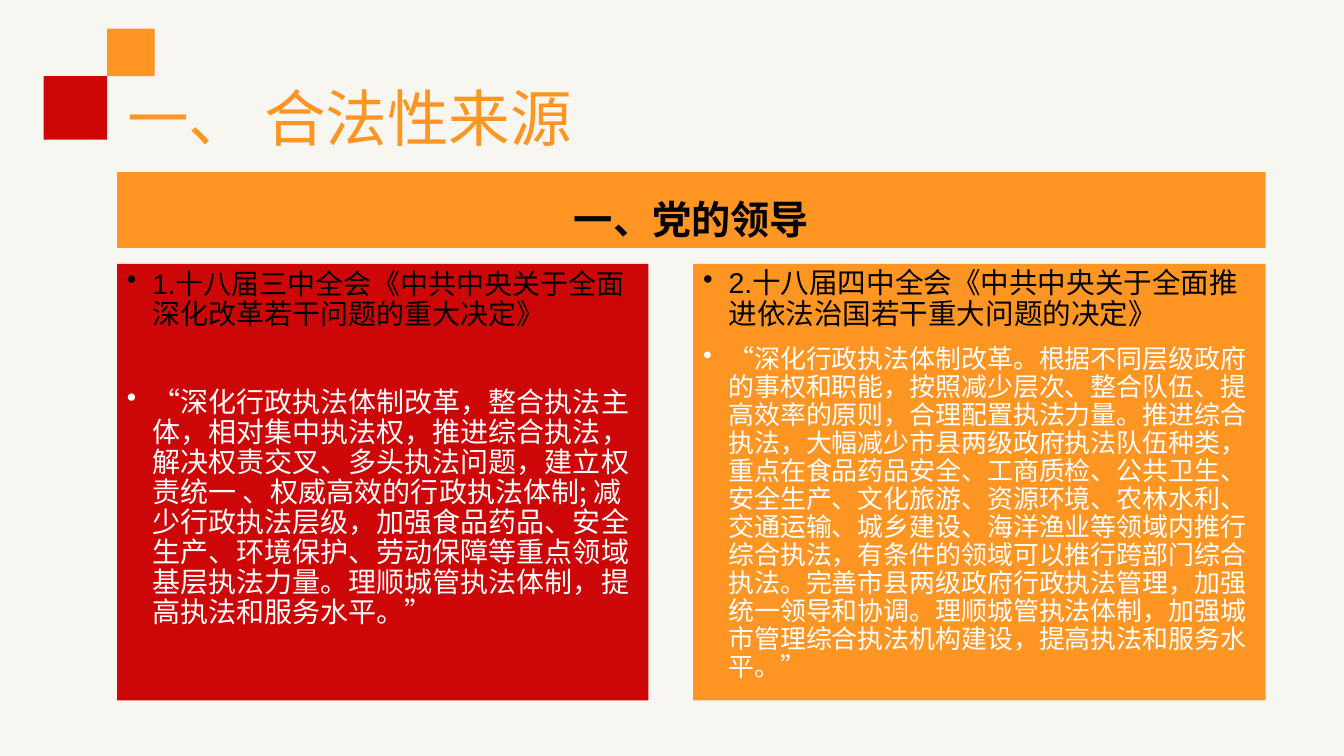
from lxml.etree import SubElement
from pptx import Presentation
from pptx.dml.color import RGBColor
from pptx.enum.shapes import MSO_SHAPE as Preset
from pptx.enum.text import MSO_ANCHOR as Anchor, PP_ALIGN as Align
from pptx.oxml.ns import qn
from pptx.util import Cm, Pt

RED = RGBColor(0xCD, 0x07, 0x07)
ORANGE = RGBColor(0xFF, 0x95, 0x23)
CREAM = RGBColor(0xF8, 0xF6, 0xF1)
BLACK = RGBColor(0, 0, 0)
WHITE = RGBColor(0xFF, 0xFF, 0xFF)

LATIN = "Arial"
CHINESE = "Noto Sans CJK SC"

LEFT = Cm(2.95)
RIGHT = Cm(31.9)
PANEL_TOP = Cm(6.65)
PANEL_HEIGHT = Cm(11)
LEFT_WIDTH = Cm(13.39)
RIGHT_WIDTH = Cm(14.43)

THIRD_PLENUM = "1.十八届三中全会《中共中央关于全面深化改革若干问题的重大决定》"
THIRD_QUOTE = (
    "“深化行政执法体制改革，整合执法主体，相对集中执法权，推进综合执法，"
    "解决权责交叉、多头执法问题，建立权责统一 、权威高效的行政执法体制; "
    "减少行政执法层级，加强食品药品、安全生产、环境保护、劳动保障等重点领域"
    "基层执法力量。理顺城管执法体制，提高执法和服务水平。”"
)
FOURTH_PLENUM = "2.十八届四中全会《中共中央关于全面推进依法治国若干重大问题的决定》"
FOURTH_QUOTE = (
    "“深化行政执法体制改革。根据不同层级政府的事权和职能，按照减少层次、"
    "整合队伍、提高效率的原则，合理配置执法力量。推进综合执法，大幅减少市县"
    "两级政府执法队伍种类，重点在食品药品安全、工商质检、公共卫生、安全生产、"
    "文化旅游、资源环境、农林水利、交通运输、城乡建设、海洋渔业等领域内推行"
    "综合执法，有条件的领域可以推行跨部门综合执法。完善市县两级政府行政执法"
    "管理，加强统一领导和协调。理顺城管执法体制，加强城市管理综合执法机构建设，"
    "提高执法和服务水平。”"
)


def add_block(slide, left, top, width, height, color):
    block = slide.shapes.add_shape(Preset.RECTANGLE, left, top, width, height)
    block.shadow.inherit = False
    block.fill.solid()
    block.fill.fore_color.rgb = color
    block.line.fill.background()
    block.text_frame.word_wrap = True
    return block


def style_text(para, size, color, name, spacing=0.9, align=Align.LEFT):
    para.alignment = align
    para.line_spacing = spacing
    para.font.size = Pt(size)
    para.font.color.rgb = color
    para.font.name = name
    if name == CHINESE:
        defaults = para.font._element
        SubElement(defaults, qn("a:ea"), typeface=name)


def add_bullet(para):
    properties = para._p.get_or_add_pPr()
    properties.set("marL", str(Cm(0.64)))
    properties.set("indent", str(-Cm(0.64)))
    bullet = properties.makeelement(qn("a:buChar"), {"char": "•"})
    properties.find(qn("a:defRPr")).addprevious(bullet)


def add_panel(slide, left, width, color, decision, quote, sizes, pitches, gap):
    panel = add_block(slide, left, PANEL_TOP, width, PANEL_HEIGHT, color)
    frame = panel.text_frame
    frame.vertical_anchor = Anchor.TOP
    source, passage = frame.paragraphs[0], frame.add_paragraph()
    source.text, passage.text = decision, quote
    style_text(source, sizes[0], BLACK, LATIN, Pt(pitches[0]))
    style_text(passage, sizes[1], WHITE, CHINESE, Pt(pitches[1]))
    passage.space_before = Pt(gap)
    for para in frame.paragraphs:
        add_bullet(para)


def add_title(slide, text):
    title = slide.shapes.title
    title.left, title.top = LEFT, Cm(1.78)
    title.width, title.height = Cm(28.6), Cm(2.57)
    title.text_frame.text = text
    title.text_frame.vertical_anchor = Anchor.MIDDLE
    style_text(title.text_frame.paragraphs[0], 44, ORANGE, LATIN)


def add_heading(slide, text):
    heading = add_block(slide, LEFT, Cm(4.34), RIGHT - LEFT, Cm(1.91), ORANGE)
    heading.text_frame.vertical_anchor = Anchor.BOTTOM
    para = heading.text_frame.paragraphs[0]
    para.text = text
    style_text(para, 28, BLACK, CHINESE, align=Align.CENTER)
    para.font.bold = True


def main():
    deck = Presentation()
    deck.slide_width, deck.slide_height = Cm(33.87), Cm(19.05)
    slide = deck.slides.add_slide(deck.slide_layouts[5])
    slide.background.fill.solid()
    slide.background.fill.fore_color.rgb = CREAM

    add_block(slide, Cm(1.1), Cm(1.92), Cm(1.6), Cm(1.6), RED)
    add_block(slide, Cm(2.7), Cm(0.72), Cm(1.2), Cm(1.2), ORANGE)
    add_title(slide, "一、 合法性来源")
    add_heading(slide, "一、党的领导")
    add_panel(slide, LEFT, LEFT_WIDTH, RED, THIRD_PLENUM, THIRD_QUOTE,
              (20, 20), (22, 21.5), 41)
    add_panel(slide, RIGHT - RIGHT_WIDTH, RIGHT_WIDTH, ORANGE, FOURTH_PLENUM,
              FOURTH_QUOTE, (20.4, 18.5), (22, 20), 11)
    deck.save("out.pptx")


if __name__ == "__main__":
    main()
